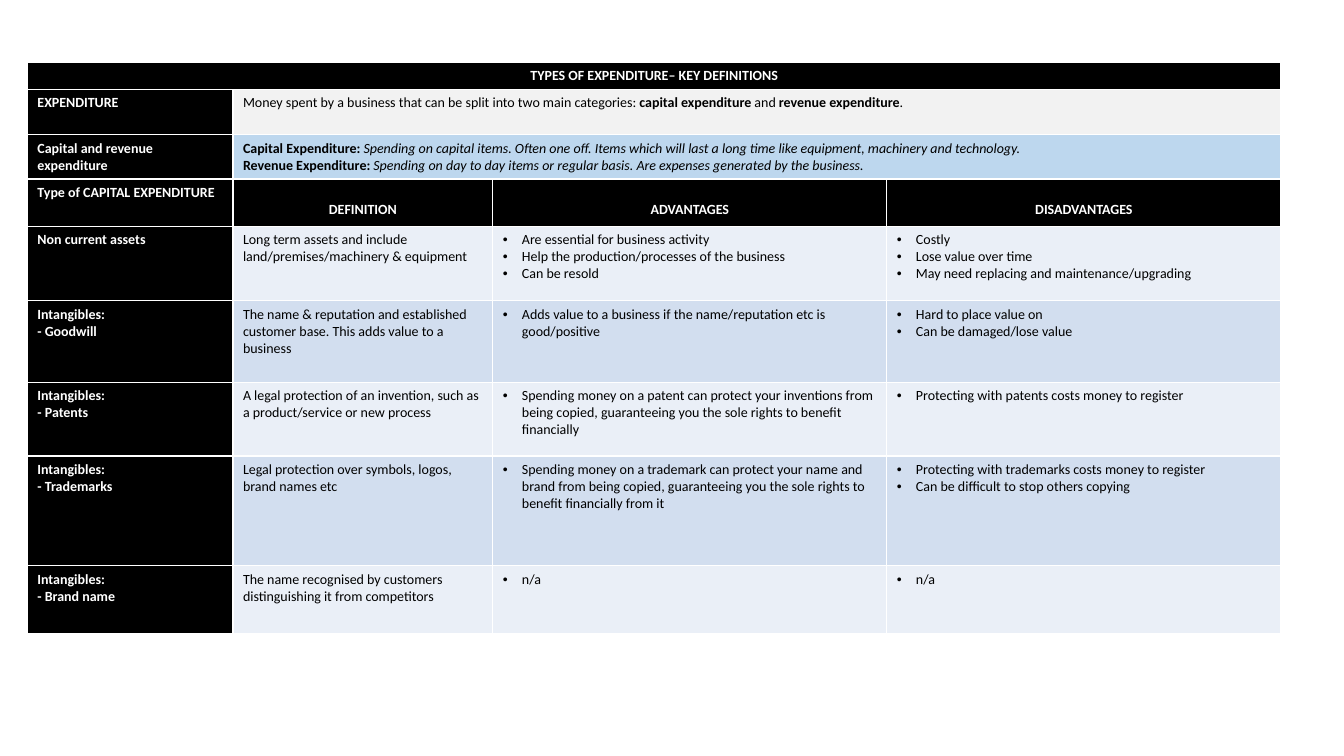
"""Build a one-slide table of key definitions for types of expenditure."""
from dataclasses import dataclass
from itertools import cycle

from lxml.etree import SubElement as Sub
from pptx import Presentation
from pptx.dml.color import RGBColor as Rgb
from pptx.enum.text import MSO_ANCHOR as Anchor, PP_ALIGN as Align
from pptx.oxml.ns import qn
from pptx.table import Table, _Cell as Cell
from pptx.util import Cm, Pt

COLOURS = {
    "black": "000000",
    "white": "FFFFFF",
    "grey": "F2F2F2",
    "blue": "BDD7EE",
    "pale": "EAEFF7",
    "mid": "D2DEEF",
}
COLUMN_WIDTHS = [5.18, 6.55, 9.93, 9.93]
ROW_HEIGHTS = [0.69, 1.14, 1.09, 1.19, 1.88, 2.06, 1.85, 2.77, 1.7]
INDENT = Cm(0.48)


@dataclass(frozen=True)
class Phrase:
    """A stretch of text in one style."""
    text: str
    bold: bool = False
    italic: bool = False


@dataclass(frozen=True)
class Entry:
    """The content and look of one cell."""
    lines: list[list[Phrase]]
    fill: str
    ink: str = "black"
    span: int = 1
    bulleted: bool = False
    centred: bool = False
    anchor: Anchor = Anchor.TOP


@dataclass(frozen=True)
class Expenditure:
    """One type of capital expenditure."""
    label: list[str]
    definition: str
    advantages: list[str]
    disadvantages: list[str]


EXPENDITURES = [
    Expenditure(
        ["Non current assets"],
        "Long term assets and include land/premises/machinery & equipment",
        ["Are essential for business activity",
         "Help the production/processes of the business", "Can be resold"],
        ["Costly", "Lose value over time", "May need replacing and maintenance/upgrading"]),
    Expenditure(
        ["Intangibles:", "- Goodwill"],
        "The name & reputation and established customer base. This adds value to a business",
        ["Adds value to a business if the name/reputation etc is good/positive"],
        ["Hard to place value on", "Can be damaged/lose value"]),
    Expenditure(
        ["Intangibles:", "- Patents"],
        "A legal protection of an invention, such as a product/service or new process",
        ["Spending money on a patent can protect your inventions from being copied, "
         "guaranteeing you the sole rights to benefit financially"],
        ["Protecting with patents costs money to register"]),
    Expenditure(
        ["Intangibles:", "- Trademarks"],
        "Legal protection over symbols, logos, brand names etc",
        ["Spending money on a trademark can protect your name and brand from being copied, "
         "guaranteeing you the sole rights to benefit financially from it"],
        ["Protecting with trademarks costs money to register",
         "Can be difficult to stop others copying"]),
    Expenditure(
        ["Intangibles:", "- Brand name"],
        "The name recognised by customers distinguishing it from competitors",
        ["n/a"], ["n/a"]),
]


def heading(*lines: str, **look) -> Entry:
    """Return a bold white-on-black entry."""
    return Entry([[Phrase(line, bold=True)] for line in lines], "black", "white", **look)


def plain(lines: list[str], fill: str, bulleted: bool = False) -> Entry:
    """Return a regular entry with one phrase per line."""
    return Entry([[Phrase(line)] for line in lines], fill, bulleted=bulleted)


def expenditure_row(item: Expenditure, fill: str) -> list[Entry]:
    """Return the four entries that describe one type of expenditure."""
    return [heading(*item.label), plain([item.definition], fill),
            plain(item.advantages, fill, True), plain(item.disadvantages, fill, True)]


def all_rows() -> list[list[Entry]]:
    """Return every row of the table from top to bottom."""
    summary = [[
        Phrase("Money spent by a business that can be split into two main categories: "),
        Phrase("capital expenditure", bold=True), Phrase(" and "),
        Phrase("revenue expenditure", bold=True), Phrase(".")]]
    comparison = [
        [Phrase("Capital Expenditure: ", bold=True),
         Phrase("Spending on capital items. Often one off. Items which will last a long time "
                "like equipment, machinery and technology.", italic=True)],
        [Phrase("Revenue Expenditure: ", bold=True),
         Phrase("Spending on day to day items or regular basis. Are expenses generated by "
                "the business.", italic=True)]]
    column_titles = [heading(title, centred=True, anchor=Anchor.BOTTOM)
                     for title in ("DEFINITION", "ADVANTAGES", "DISADVANTAGES")]
    return [
        [heading("TYPES OF EXPENDITURE– KEY DEFINITIONS", span=4, centred=True)],
        [heading("EXPENDITURE"), Entry(summary, "grey", span=3)],
        [heading("Capital and revenue expenditure"), Entry(comparison, "blue", span=3)],
        [heading("Type of CAPITAL EXPENDITURE"), *column_titles],
        *map(expenditure_row, EXPENDITURES, cycle(["pale", "mid"])),
    ]


def add_borders(cell: Cell) -> None:
    """Give all four sides of a cell a thin white line."""
    properties = cell._tc.get_or_add_tcPr()
    for position, side in enumerate(("lnL", "lnR", "lnT", "lnB")):
        border = properties.makeelement(qn(f"a:{side}"), {"w": str(Pt(1))})
        ink = Sub(Sub(border, qn("a:solidFill")), qn("a:srgbClr"))
        ink.set("val", COLOURS["white"])
        properties.insert(position, border)


def write_entry(cell: Cell, entry: Entry) -> None:
    """Fill a cell with the text and look of an entry."""
    cell.fill.solid()
    cell.fill.fore_color.rgb = Rgb.from_string(COLOURS[entry.fill])
    cell.vertical_anchor = entry.anchor
    if entry.anchor == Anchor.BOTTOM:
        cell.margin_bottom = Cm(0.2)
    frame = cell.text_frame
    for number, line in enumerate(entry.lines):
        paragraph = frame.add_paragraph() if number else frame.paragraphs[0]
        paragraph.alignment = Align.CENTER if entry.centred else Align.LEFT
        if entry.bulleted:
            properties = paragraph._p.get_or_add_pPr()
            properties.set("marL", str(INDENT))
            properties.set("indent", str(-INDENT))
            Sub(properties, qn("a:buFont")).set("typeface", "Arial")
            Sub(properties, qn("a:buChar")).set("char", "•")
        for phrase in line:
            run = paragraph.add_run()
            run.text = phrase.text
            style = {"name": "Calibri", "size": Pt(10),
                     "bold": phrase.bold, "italic": phrase.italic}
            for attribute, value in style.items():
                setattr(run.font, attribute, value)
            run.font.color.rgb = Rgb.from_string(COLOURS[entry.ink])


def fill_row(definitions: Table, row: int, entries: list[Entry]) -> None:
    """Write the entries of one row, merging cells where an entry spans several."""
    column = 0
    for entry in entries:
        cell = definitions.cell(row, column)
        column += entry.span
        if entry.span > 1:
            cell.merge(definitions.cell(row, column - 1))
        write_entry(cell, entry)


def main() -> None:
    """Create the presentation and save it."""
    deck = Presentation()
    deck.slide_width, deck.slide_height = Cm(33.87), Cm(19.05)
    slide = deck.slides.add_slide(deck.slide_layouts[6])
    definitions = slide.shapes.add_table(
        len(ROW_HEIGHTS), len(COLUMN_WIDTHS), Cm(0.69), Cm(1.57),
        Cm(sum(COLUMN_WIDTHS)), Cm(sum(ROW_HEIGHTS))).table
    definitions.first_row = definitions.horz_banding = False
    for column, width in zip(definitions.columns, COLUMN_WIDTHS):
        column.width = Cm(width)
    for row, height in zip(definitions.rows, ROW_HEIGHTS):
        row.height = Cm(height)
    for number, entries in enumerate(all_rows()):
        fill_row(definitions, number, entries)
    for cell in definitions.iter_cells():
        add_borders(cell)
    deck.save("out.pptx")


if __name__ == "__main__":
    main()
